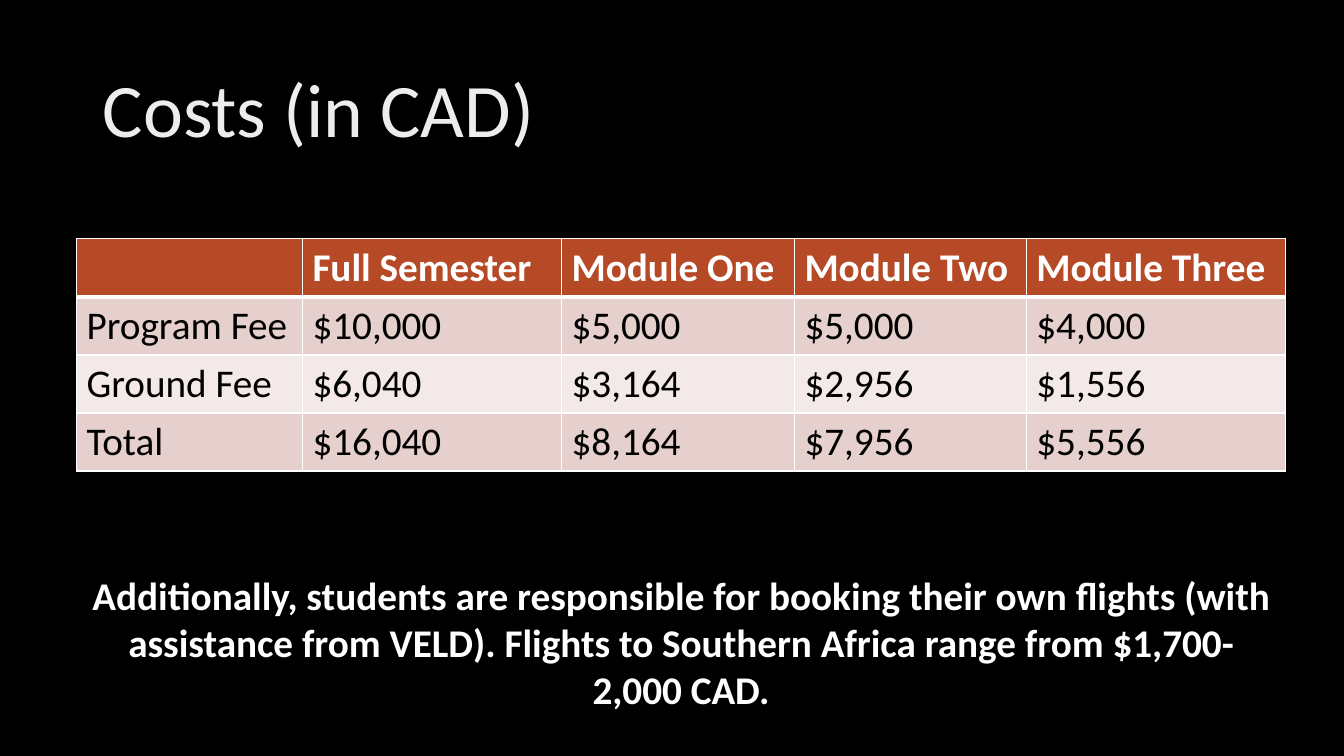
from dataclasses import dataclass

from lxml.etree import SubElement
from pptx import Presentation
from pptx.dml.color import RGBColor
from pptx.enum.text import MSO_ANCHOR, MSO_AUTO_SIZE, PP_ALIGN
from pptx.oxml.ns import qn
from pptx.util import Emu, Pt

EMU_PER_PX = 9144
FONT = "Calibri"
WHITE = "FFFFFF"
BLACK = "000000"
COLUMN_WIDTHS = (224, 257, 231, 230, 257)
ROW_HEIGHT = 57
THIN_BORDER = 1
HEADER_BORDER = 3


@dataclass(frozen=True)
class Box:
    left: int
    top: int
    width: int
    height: int

    def emu(self) -> tuple[Emu, Emu, Emu, Emu]:
        return px(self.left), px(self.top), px(self.width), px(self.height)


@dataclass(frozen=True)
class CostRow:
    texts: tuple[str, ...]
    fill: str
    color: str = BLACK
    bold: bool = False
    top_border: int = THIN_BORDER
    bottom_border: int = THIN_BORDER


COST_ROWS = (
    CostRow(("", "Full Semester", "Module One", "Module Two", "Module Three"),
            "B64926", WHITE, True, bottom_border=HEADER_BORDER),
    CostRow(("Program Fee", "$10,000", "$5,000", "$5,000", "$4,000"),
            "E5D0CD", top_border=HEADER_BORDER),
    CostRow(("Ground Fee", "$6,040", "$3,164", "$2,956", "$1,556"), "F3E9E8"),
    CostRow(("Total", "$16,040", "$8,164", "$7,956", "$5,556"), "E5D0CD"),
)
FLIGHTS_NOTE = (
    "Additionally, students are responsible for booking their own flights "
    "(with assistance from VELD). Flights to Southern Africa range from "
    "$1,700-2,000 CAD."
)


def px(length: int) -> Emu:
    return Emu(length * EMU_PER_PX)


def paint(fill, color: str) -> None:
    fill.solid()
    fill.fore_color.rgb = RGBColor.from_string(color)


def style(paragraph, size: int, color: str, bold: bool, align: PP_ALIGN) -> None:
    paragraph.alignment = align
    font = paragraph.font
    font.name = FONT
    font.size = Pt(size)
    font.bold = bold
    paint(font.fill, color)


def add_borders(cell, row: CostRow) -> None:
    properties = cell._tc.get_or_add_tcPr()
    widths = {"L": THIN_BORDER, "R": THIN_BORDER,
              "T": row.top_border, "B": row.bottom_border}
    for side, width in widths.items():
        line = SubElement(properties, qn(f"a:ln{side}"), w=str(Pt(width)))
        solid = SubElement(line, qn("a:solidFill"))
        SubElement(solid, qn("a:srgbClr"), val=WHITE)


def set_title(slide, box: Box) -> None:
    title = slide.shapes.title
    title.left, title.top, title.width, title.height = box.emu()
    frame = title.text_frame
    frame.text = "Costs (in CAD)"
    frame.auto_size = MSO_AUTO_SIZE.NONE
    frame.vertical_anchor = MSO_ANCHOR.MIDDLE
    paragraph = frame.paragraphs[0]
    paragraph.line_spacing = 0.9
    style(paragraph, 54, "EDEDED", False, PP_ALIGN.LEFT)


def add_costs(slide, left: int, top: int) -> None:
    box = Box(left, top, sum(COLUMN_WIDTHS), ROW_HEIGHT * len(COST_ROWS))
    table = slide.shapes.add_table(
        len(COST_ROWS), len(COLUMN_WIDTHS), *box.emu()).table
    for column, width in zip(table.columns, COLUMN_WIDTHS):
        column.width = px(width)
    for table_row, row in zip(table.rows, COST_ROWS):
        table_row.height = px(ROW_HEIGHT)
        for cell, text in zip(table_row.cells, row.texts):
            cell.text = text
            add_borders(cell, row)
            paint(cell.fill, row.fill)
            style(cell.text_frame.paragraphs[0], 28, row.color, row.bold,
                  PP_ALIGN.LEFT)


def add_note(slide, box: Box) -> None:
    frame = slide.shapes.add_textbox(*box.emu()).text_frame
    frame.word_wrap = True
    frame.auto_size = MSO_AUTO_SIZE.SHAPE_TO_FIT_TEXT
    frame.text = FLIGHTS_NOTE
    style(frame.paragraphs[0], 28, WHITE, True, PP_ALIGN.CENTER)


def main() -> None:
    presentation = Presentation()
    presentation.slide_width = px(1333)
    presentation.slide_height = px(750)
    title_only = presentation.slide_layouts.get_by_name("Title Only")
    slide = presentation.slides.add_slide(title_only)
    paint(slide.background.fill, BLACK)
    set_title(slide, Box(92, 40, 1150, 145))
    add_costs(slide, 76, 237)
    add_note(slide, Box(76, 562, 1199, 151))
    presentation.save("out.pptx")


if __name__ == "__main__":
    main()
